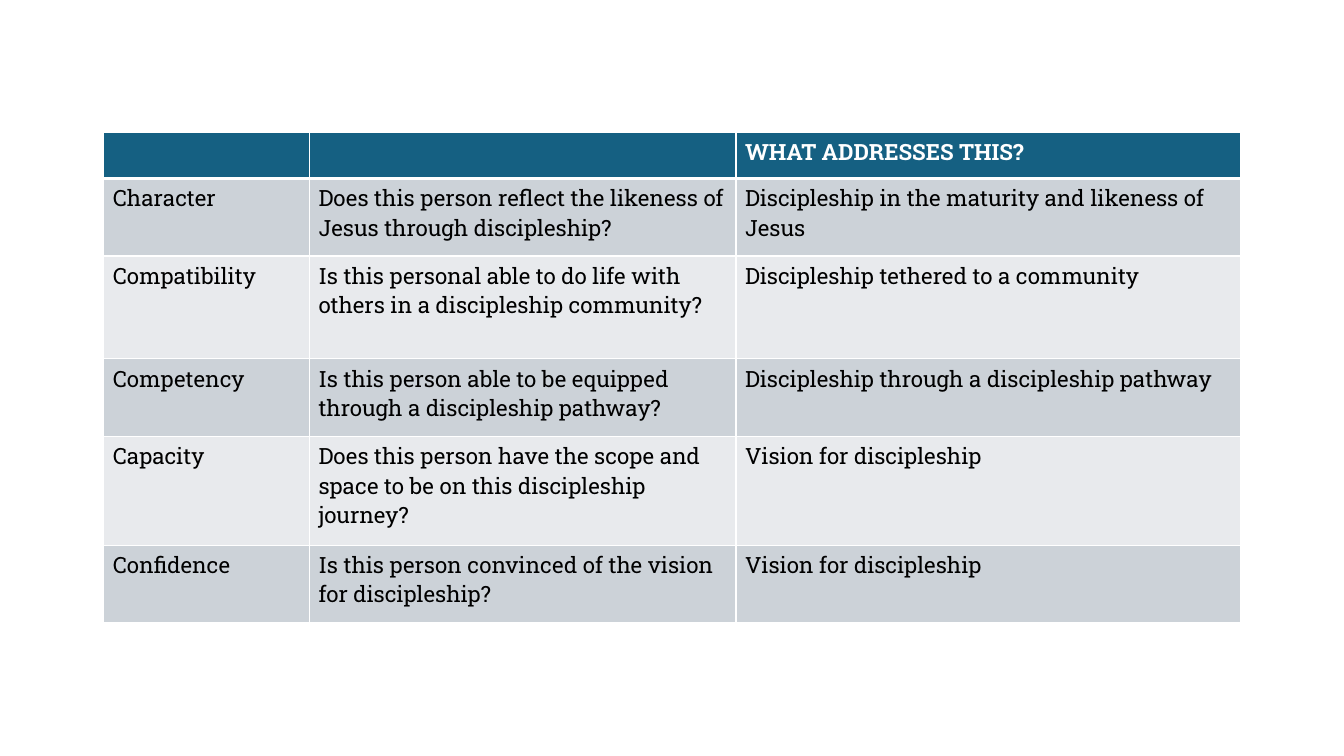
from lxml import etree
from pptx import Presentation
from pptx.dml.color import RGBColor
from pptx.oxml.ns import qn
from pptx.util import Inches, Pt

WHITE = RGBColor(0xFF, 0xFF, 0xFF)
BLACK = RGBColor(0x00, 0x00, 0x00)
HEADER_BLUE = RGBColor(0x15, 0x60, 0x82)
BAND_DARK = RGBColor(0xCC, 0xD2, 0xD8)
BAND_LIGHT = RGBColor(0xE8, 0xEA, 0xED)

COLUMN_WIDTHS = [2.04, 4.23, 5]
ROW_HEIGHTS = [0.46, 0.77, 1.02, 0.77, 1.08, 0.77]
ROWS = [
    ("", "", "WHAT ADDRESSES THIS?"),
    ("Character",
     "Does this person reflect the likeness of Jesus through discipleship?",
     "Discipleship in the maturity and likeness of Jesus"),
    ("Compatibility",
     "Is this personal able to do life with others in a discipleship community?",
     "Discipleship tethered to a community"),
    ("Competency",
     "Is this person able to be equipped through a discipleship pathway?",
     "Discipleship through a discipleship pathway"),
    ("Capacity",
     "Does this person have the scope and space to be on this discipleship journey?",
     "Vision for discipleship"),
    ("Confidence",
     "Is this person convinced of the vision for discipleship?",
     "Vision for discipleship"),
]


def add_borders(cell, widths):
    properties = cell._tc.get_or_add_tcPr()
    for index, (side, width) in enumerate(widths.items()):
        line = etree.Element(qn(f"a:{side}"), w=str(Pt(width)))
        fill = etree.SubElement(line, qn("a:solidFill"))
        etree.SubElement(fill, qn("a:srgbClr"), val=str(WHITE))
        properties.insert(index, line)


deck = Presentation()
deck.slide_width = Inches(13.33)
deck.slide_height = Inches(7.5)
page = deck.slides.add_slide(deck.slide_layouts[6])

table = page.shapes.add_table(
    len(ROWS), len(COLUMN_WIDTHS), Inches(1.03), Inches(1.31),
    Inches(sum(COLUMN_WIDTHS)), Inches(sum(ROW_HEIGHTS))).table
for column, width in zip(table.columns, COLUMN_WIDTHS):
    column.width = Inches(width)

for row_index, (texts, height) in enumerate(zip(ROWS, ROW_HEIGHTS)):
    table.rows[row_index].height = Inches(height)
    is_header = row_index == 0
    band = BAND_DARK if row_index % 2 else BAND_LIGHT
    for column_index, text in enumerate(texts):
        cell = table.cell(row_index, column_index)
        cell.margin_left = cell.margin_right = Inches(0.09)
        cell.margin_top = cell.margin_bottom = Inches(0.05)
        cell.fill.solid()
        cell.fill.fore_color.rgb = HEADER_BLUE if is_header else band
        add_borders(cell, {"lnL": 1, "lnR": 1,
                           "lnT": 3 if row_index == 1 else 1,
                           "lnB": 3 if is_header else 1})
        if text:
            span = cell.text_frame.paragraphs[0].add_run()
            span.text = text
            span.font.name = "Roboto Slab"
            span.font.size = Pt(16)
            span.font.bold = is_header
            span.font.color.rgb = WHITE if is_header else BLACK

deck.save("out.pptx")
